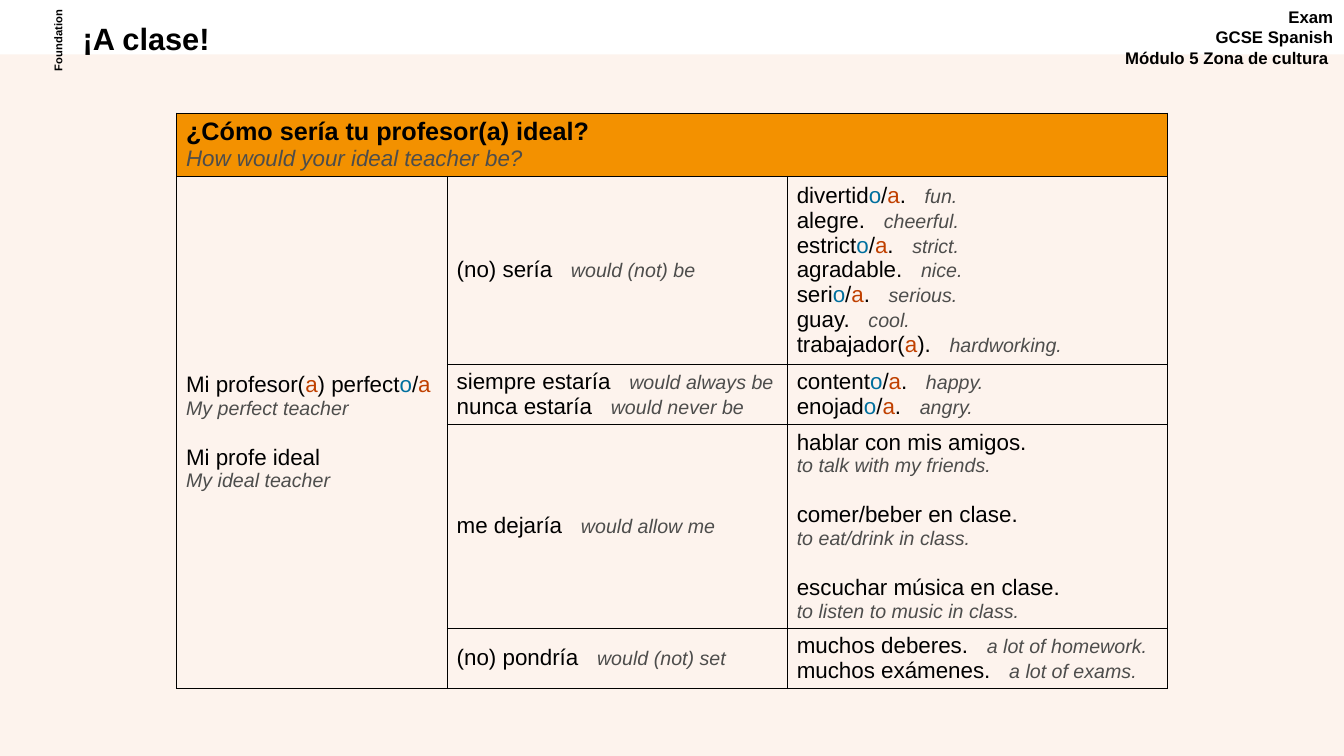
from dataclasses import dataclass

from lxml import etree
from pptx import Presentation
from pptx.dml.color import RGBColor
from pptx.enum.shapes import MSO_SHAPE
from pptx.enum.text import MSO_ANCHOR, MSO_AUTO_SIZE, PP_ALIGN
from pptx.oxml.ns import qn
from pptx.util import Cm, Pt

RECTANGLE = MSO_SHAPE.RECTANGLE
TOP, MIDDLE = MSO_ANCHOR.TOP, MSO_ANCHOR.MIDDLE
NO_AUTOFIT = MSO_AUTO_SIZE.NONE
LEFT, CENTER, RIGHT = PP_ALIGN.LEFT, PP_ALIGN.CENTER, PP_ALIGN.RIGHT


@dataclass(frozen=True)
class Style:
    size: float
    color: str = "000000"
    bold: bool = False
    italic: bool = False


@dataclass(frozen=True)
class Theme:
    font: str = "Arial"
    page: str = "FDF3ED"
    heading_fill: str = "F39100"
    border: str = "000000"
    border_width: float = 0.75
    title: Style = Style(22, bold=True)
    course: Style = Style(12, bold=True)
    tier: Style = Style(8, bold=True)
    question: Style = Style(18, bold=True)
    question_english: Style = Style(16, "4D4D4C", italic=True)
    spanish: Style = Style(16)
    masculine: Style = Style(16, "006F9E")
    feminine: Style = Style(16, "C04000")
    english: Style = Style(14, "4D4D4C", italic=True)
    translation_gap: float = 8.9
    phrase_gap: float = 18.4


THEME = Theme()
ENDING_STYLES = {"o": THEME.masculine, "a": THEME.feminine}


@dataclass(frozen=True)
class Phrase:
    """Spanish with its gender endings between asterisks, and its translation."""
    spanish: str
    english: str


@dataclass(frozen=True)
class PhraseCell:
    row: int
    column: int
    phrases: tuple[Phrase, ...]
    stacked: bool = False


@dataclass(frozen=True)
class Label:
    left: float
    top: float
    width: float
    height: float
    lines: tuple[str, ...]
    style: Style
    alignment: PP_ALIGN
    rotation: float = 0


TITLE = Label(1.83, 0.48, 17.48, 1.09, ("¡A clase!",), THEME.title, LEFT)
LABELS = (
    Label(27.91, 0.05, 5.94, 1.96,
          ("Exam", "GCSE Spanish", "Módulo 5 Zona de cultura "), THEME.course, RIGHT),
    Label(0.15, 0.74, 2.59, 0.56, ("Foundation",), THEME.tier, CENTER, 270),
)
COLUMN_WIDTHS = (6.82, 8.57, 9.57)
ROW_HEIGHTS = (1.59, 4.74, 1.51, 5.14, 1.51)
QUESTION = Phrase("¿Cómo sería tu profesor(a) ideal?", "How would your ideal teacher be?")
PHRASE_CELLS = (
    PhraseCell(1, 0, (
        Phrase("Mi profesor(*a*) perfect*o*/*a*", "My perfect teacher"),
        Phrase("Mi profe ideal", "My ideal teacher"),
    ), stacked=True),
    PhraseCell(1, 1, (Phrase("(no) sería", "would (not) be"),)),
    PhraseCell(1, 2, (
        Phrase("divertid*o*/*a*.", "fun."),
        Phrase("alegre.", "cheerful."),
        Phrase("estrict*o*/*a*.", "strict."),
        Phrase("agradable.", "nice."),
        Phrase("seri*o*/*a*.", "serious."),
        Phrase("guay.", "cool."),
        Phrase("trabajador(*a*).", "hardworking."),
    )),
    PhraseCell(2, 1, (
        Phrase("siempre estaría", "would always be"),
        Phrase("nunca estaría", "would never be"),
    )),
    PhraseCell(2, 2, (
        Phrase("content*o*/*a*.", "happy."),
        Phrase("enojad*o*/*a*.", "angry."),
    )),
    PhraseCell(3, 1, (Phrase("me dejaría", "would allow me"),)),
    PhraseCell(3, 2, (
        Phrase("hablar con mis amigos.", "to talk with my friends."),
        Phrase("comer/beber en clase.", "to eat/drink in class."),
        Phrase("escuchar música en clase.", "to listen to music in class."),
    ), stacked=True),
    PhraseCell(4, 1, (Phrase("(no) pondría", "would (not) set"),)),
    PhraseCell(4, 2, (
        Phrase("muchos deberes.", "a lot of homework."),
        Phrase("muchos exámenes.", "a lot of exams."),
    )),
)


def add_run(paragraph, text: str, style: Style):
    run = paragraph.add_run()
    run.text = text
    font = run.font
    font.name, font.size = THEME.font, Pt(style.size)
    font.bold, font.italic = style.bold, style.italic
    font.color.rgb = RGBColor.from_string(style.color)
    return run


def next_paragraph(text_frame, index: int):
    return text_frame.add_paragraph() if index else text_frame.paragraphs[0]


def write_label(shape, label: Label) -> None:
    shape.left, shape.top = Cm(label.left), Cm(label.top)
    shape.width, shape.height = Cm(label.width), Cm(label.height)
    shape.rotation = label.rotation
    text_frame = shape.text_frame
    text_frame.word_wrap = True
    text_frame.auto_size = NO_AUTOFIT
    text_frame.vertical_anchor = TOP
    for index, line in enumerate(label.lines):
        paragraph = next_paragraph(text_frame, index)
        paragraph.alignment = label.alignment
        add_run(paragraph, line, label.style)


def add_page_band(presentation, slide) -> None:
    top = Cm(1.37)
    band = slide.shapes.add_shape(
        RECTANGLE, 0, top, presentation.slide_width, presentation.slide_height - top)
    band.shadow.inherit = False
    band.fill.solid()
    band.fill.fore_color.rgb = RGBColor.from_string(THEME.page)
    band.line.fill.background()
    slide.shapes.title.element.addprevious(band.element)


def format_cell(cell) -> None:
    cell.vertical_anchor = MIDDLE
    cell.margin_left = cell.margin_right = Cm(0.24)
    cell.margin_top = cell.margin_bottom = Cm(0.1)
    properties = cell._tc.get_or_add_tcPr()
    for side in ("a:lnL", "a:lnR", "a:lnT", "a:lnB"):
        line = etree.SubElement(properties, qn(side), w=str(Pt(THEME.border_width)))
        fill = etree.SubElement(line, qn("a:solidFill"))
        etree.SubElement(fill, qn("a:srgbClr"), val=THEME.border)
    cell.fill.background()


def write_phrases(text_frame, phrase_cell: PhraseCell) -> None:
    for index, phrase in enumerate(phrase_cell.phrases):
        paragraph = next_paragraph(text_frame, index)
        for position, piece in enumerate(phrase.spanish.split("*")):
            if piece:
                style = ENDING_STYLES[piece] if position % 2 else THEME.spanish
                add_run(paragraph, piece, style)
        if phrase_cell.stacked:
            if index:
                paragraph.space_before = Pt(THEME.phrase_gap)
            paragraph = text_frame.add_paragraph()
        else:
            gap = add_run(paragraph, " ", THEME.spanish)
            gap._r.get_or_add_rPr().set("spc", str(round(THEME.translation_gap * 100)))
        add_run(paragraph, phrase.english, THEME.english)


def add_phrase_table(slide) -> None:
    table = slide.shapes.add_table(
        len(ROW_HEIGHTS), len(COLUMN_WIDTHS), Cm(4.45), Cm(2.85),
        Cm(sum(COLUMN_WIDTHS)), Cm(sum(ROW_HEIGHTS))).table
    table.first_row = table.horz_banding = False
    for column, width in zip(table.columns, COLUMN_WIDTHS):
        column.width = Cm(width)
    for row, height in zip(table.rows, ROW_HEIGHTS):
        row.height = Cm(height)
    for cell in table.iter_cells():
        format_cell(cell)

    heading = table.cell(0, 0)
    heading.merge(table.cell(0, len(COLUMN_WIDTHS) - 1))
    heading.fill.solid()
    heading.fill.fore_color.rgb = RGBColor.from_string(THEME.heading_fill)
    add_run(heading.text_frame.paragraphs[0], QUESTION.spanish, THEME.question)
    add_run(heading.text_frame.add_paragraph(), QUESTION.english, THEME.question_english)

    table.cell(1, 0).merge(table.cell(len(ROW_HEIGHTS) - 1, 0))
    for phrase_cell in PHRASE_CELLS:
        cell = table.cell(phrase_cell.row, phrase_cell.column)
        write_phrases(cell.text_frame, phrase_cell)


def main() -> None:
    presentation = Presentation()
    presentation.slide_width, presentation.slide_height = Cm(33.87), Cm(19.05)
    slide = presentation.slides.add_slide(presentation.slide_layouts[5])
    add_page_band(presentation, slide)
    write_label(slide.shapes.title, TITLE)
    slide.shapes.title.text_frame.paragraphs[0].line_spacing = 0.9
    for label in LABELS:
        write_label(slide.shapes.add_textbox(0, 0, 0, 0), label)
    add_phrase_table(slide)
    presentation.save("out.pptx")


if __name__ == "__main__":
    main()
